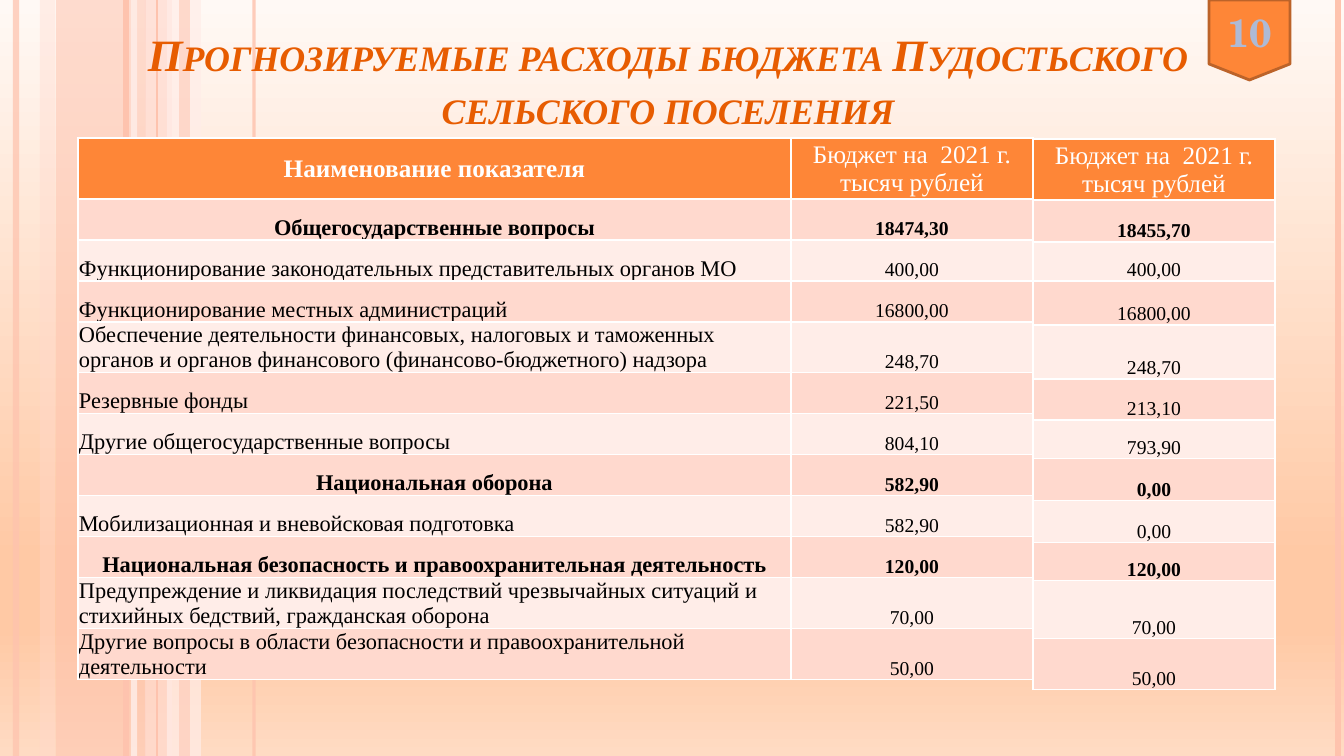
from lxml import etree
from pptx import Presentation
from pptx.dml.color import RGBColor
from pptx.enum.shapes import MSO_CONNECTOR, MSO_SHAPE
from pptx.enum.text import MSO_ANCHOR, MSO_AUTO_SIZE, PP_ALIGN
from pptx.oxml.ns import qn
from pptx.util import Pt

PX = 914400 / 100.8
WIDTH, HEIGHT = 1344, 756
RECTANGLE, BADGE = MSO_SHAPE.RECTANGLE, MSO_SHAPE.FLOWCHART_OFFPAGE_CONNECTOR
STRAIGHT = MSO_CONNECTOR.STRAIGHT
LEFT, CENTER = PP_ALIGN.LEFT, PP_ALIGN.CENTER
MIDDLE, BOTTOM = MSO_ANCHOR.MIDDLE, MSO_ANCHOR.BOTTOM
NO_FIT = MSO_AUTO_SIZE.NONE
SERIF, SCHOLA = "Times New Roman", "TeX Gyre Schola"

COLORS = {
    "orange": "FE8637", "rust": "BC6329", "title": "E75C01", "number": "AEBAD5",
    "pink": "FEC3AE", "rose": "FFD9CE", "blush": "FFEDE8",
    "white": "FFFFFF", "black": "000000",
}
BACKGROUND = [(0, "FFF9F5"), (74, "FFC9A5"), (83, "FFC9A5"), (100, "FFDBC3")]

# Decoration: bands are left, width, color, opacity; lines are x, points, color, opacity
BANDS = [(56, 90, "pink", 54), (40, 15, "rose", 36),
         (145, 27, "rose", 70), (167, 34, "blush", 71)]
LINES = [(16, 4.5, "pink", 73), (134, 4.5, "blush", 83), (126, 4.5, "pink", 100),
         (254, 2.25, "pink", 82), (157, 0.75, "pink", 100)]
TOP_BAND = (179, 11, "pink", 51)
EDGE_LINE = (1338, 4.5, "pink", 100)

# Budget: name, first value, second value, is a section heading
BUDGET = [
    ("Общегосударственные вопросы", "18474,30", "18455,70", True),
    ("Функционирование законодательных представительных органов МО",
     "400,00", "400,00", False),
    ("Функционирование местных администраций", "16800,00", "16800,00", False),
    ("Обеспечение деятельности финансовых, налоговых и таможенных органов и "
     "органов финансового (финансово-бюджетного) надзора", "248,70", "248,70", False),
    ("Резервные фонды", "221,50", "213,10", False),
    ("Другие общегосударственные вопросы", "804,10", "793,90", False),
    ("Национальная оборона", "582,90", "0,00", True),
    ("Мобилизационная и вневойсковая подготовка", "582,90", "0,00", False),
    ("Национальная безопасность и правоохранительная деятельность",
     "120,00", "120,00", True),
    ("Предупреждение и ликвидация последствий чрезвычайных ситуаций и стихийных "
     "бедствий, гражданская оборона", "70,00", "70,00", False),
    ("Другие вопросы в области безопасности и правоохранительной деятельности",
     "50,00", "50,00", False),
]
NAME_HEADER = "Наименование показателя"
VALUE_HEADER = "Бюджет на  2021 г. тысяч рублей"


def px(length):
    return round(length * PX)


def rgb(name):
    return RGBColor.from_string(COLORS[name])


class SlideBuilder:
    def __init__(self, page, font):
        self.page = page
        self.font = font

    def background(self, stops):
        fill = self.page.background.fill
        fill.gradient()
        fill.gradient_angle = 270
        stop_list = fill._fill._gradFill.find(qn("a:gsLst"))
        for stop in list(stop_list):
            stop_list.remove(stop)
        for position, color in stops:
            stop = etree.SubElement(stop_list, qn("a:gs"), pos=str(position * 1000))
            etree.SubElement(stop, qn("a:srgbClr"), val=color)

    def opacity(self, element, percent):
        if percent < 100:
            color = next(element.iter(qn("a:srgbClr")))
            etree.SubElement(color, qn("a:alpha"), val=str(percent * 1000))

    def shape(self, kind, left, top, width, height, color):
        shape = self.page.shapes.add_shape(kind, px(left), px(top), px(width), px(height))
        shape.shadow.inherit = False
        shape.fill.solid()
        shape.fill.fore_color.rgb = rgb(color)
        shape.line.fill.background()
        return shape

    def band(self, left, width, color, percent):
        band = self.shape(RECTANGLE, left, 0, width, HEIGHT, color)
        self.opacity(band._element.spPr, percent)

    def line(self, x, points, color, percent):
        line = self.page.shapes.add_connector(STRAIGHT, px(x), 0, px(x), px(HEIGHT))
        line.line.width = Pt(points)
        line.line.color.rgb = rgb(color)
        properties = line._element.spPr
        self.opacity(properties, percent)
        etree.SubElement(properties, qn("a:effectLst"))

    def text(self, frame, words, color, align=CENTER, **formats):
        para = frame.paragraphs[0]
        para.alignment = align
        span = para.add_run()
        span.text = words
        span.font.color.rgb = rgb(color)
        for name, value in {"name": self.font, **formats}.items():
            setattr(span.font, name, value)
        return span

    def badge(self, left, top, width, height, words):
        badge = self.shape(BADGE, left, top, width, height, "orange")
        badge.line.color.rgb = rgb("rust")
        badge.line.width = Pt(2)
        badge.text_frame.vertical_anchor = MIDDLE
        self.text(badge.text_frame, words, "number", name=SCHOLA, size=Pt(28), bold=True)

    def title(self, left, top, width, height, words):
        title = self.page.shapes.title
        box = {"left": left, "top": top, "width": width, "height": height}
        for name, value in box.items():
            setattr(title, name, px(value))
        frame = title.text_frame
        frame.word_wrap = True
        frame.auto_size = NO_FIT
        frame.vertical_anchor = BOTTOM
        span = self.text(frame, words, "title", size=Pt(32), bold=True, italic=True)
        span.font._element.set("cap", "small")
        self.page.shapes._spTree.append(title._element)

    def borders(self, cell):
        properties = cell._tc.get_or_add_tcPr()
        for index, side in enumerate(("lnL", "lnR", "lnT", "lnB")):
            border = etree.Element(qn("a:" + side), w=str(Pt(1)))
            fill = etree.SubElement(border, qn("a:solidFill"))
            etree.SubElement(fill, qn("a:srgbClr"), val=COLORS["white"])
            properties.insert(index, border)

    def cell(self, cell, words, fill, color, anchor, tight=True, **formats):
        cell.fill.solid()
        cell.fill.fore_color.rgb = rgb(fill)
        cell.vertical_anchor = anchor
        if tight:
            cell.margin_left = cell.margin_right = cell.margin_top = px(1)
            cell.margin_bottom = 0
        self.borders(cell)
        self.text(cell.text_frame, words, color, **formats)

    def table(self, left, top, widths, heights, headers, rows):
        frame = self.page.shapes.add_table(len(heights), len(widths), px(left), px(top),
                                           px(sum(widths)), px(sum(heights)))
        table = frame.table
        for column, width in zip(table.columns, widths):
            column.width = px(width)
        for row, height in zip(table.rows, heights):
            row.height = px(height)
        for column, words in enumerate(headers):
            is_name = words == NAME_HEADER
            self.cell(table.cell(0, column), words, "orange", "white", MIDDLE,
                      tight=not is_name, size=Pt(18), bold=is_name)
        for number, (texts, heading) in enumerate(rows, 1):
            fill = "rose" if number % 2 else "blush"
            for column, words in enumerate(texts):
                is_name = headers[column] == NAME_HEADER
                self.cell(table.cell(number, column), words, fill, "black", BOTTOM,
                          align=LEFT if is_name and not heading else CENTER,
                          size=Pt(16 if is_name else 14), bold=heading)


def main():
    deck = Presentation()
    deck.slide_width, deck.slide_height = px(WIDTH), px(HEIGHT)
    builder = SlideBuilder(deck.slides.add_slide(deck.slide_layouts[5]), SERIF)

    # Background and stripes
    builder.background(BACKGROUND)
    for band in BANDS:
        builder.band(*band)
    for line in LINES:
        builder.line(*line)
    builder.band(*TOP_BAND)
    builder.line(*EDGE_LINE)

    # Page number and title
    builder.badge(1209, 0, 81, 80, "10")
    builder.title(109, 20, 1118, 119,
                  "Прогнозируемые расходы бюджета Пудостьского сельского поселения")

    # Budget tables
    builder.table(78, 138, [713, 242], [61] + [41] * len(BUDGET),
                  [NAME_HEADER, VALUE_HEADER],
                  [((name, first), heading) for name, first, _, heading in BUDGET])
    builder.table(1033, 139, [242], [61, 42, 39, 44, 54, 41, 39, 42, 42, 38, 58, 51],
                  [VALUE_HEADER],
                  [((second,), heading) for _, _, second, heading in BUDGET])

    deck.save("out.pptx")


if __name__ == "__main__":
    main()
